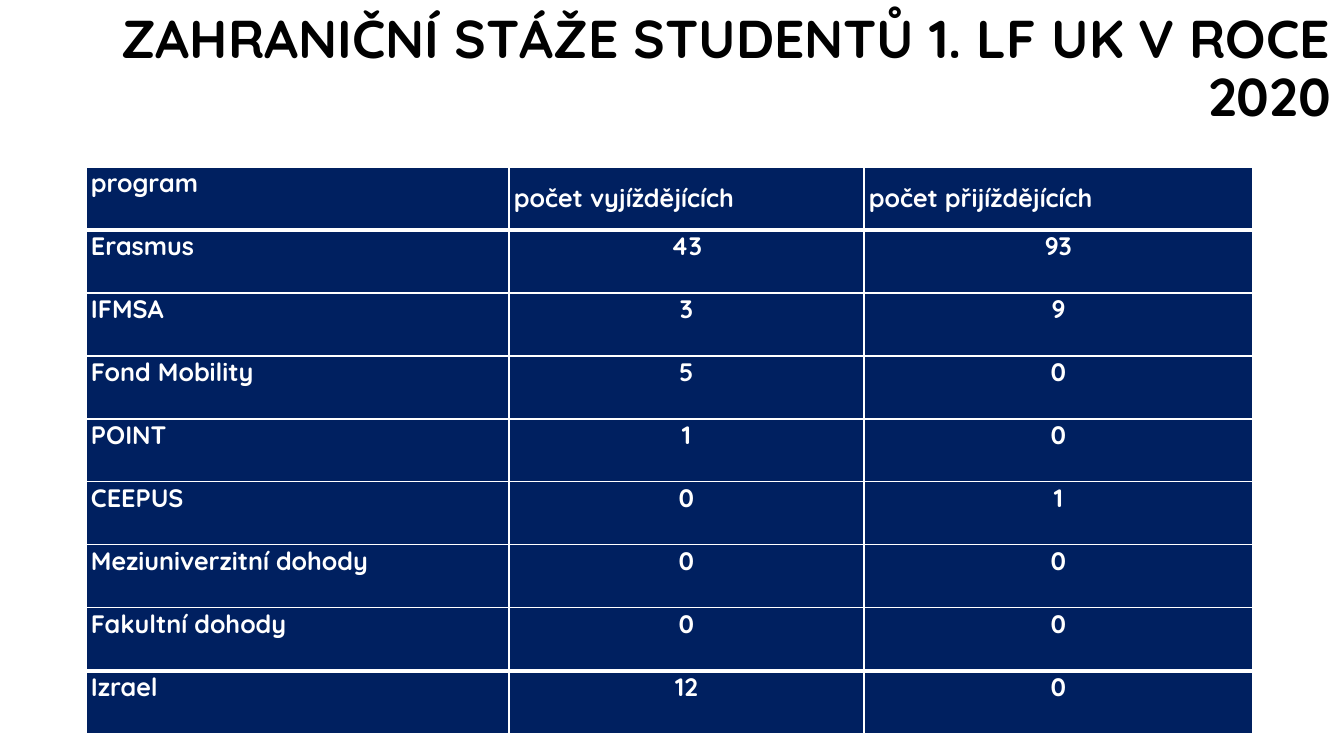
from lxml.etree import SubElement
from pptx import Presentation
from pptx.dml.color import RGBColor
from pptx.enum.text import MSO_ANCHOR, MSO_AUTO_SIZE, PP_ALIGN
from pptx.oxml.ns import qn
from pptx.util import Pt

SCALE = 914400 / 100.8
NAVY = RGBColor(0x00, 0x20, 0x60)
WHITE = RGBColor(0xFF, 0xFF, 0xFF)
BLACK = RGBColor(0x00, 0x00, 0x00)
FONT = "Quicksand"
WIDTHS = [423, 355, 389]
HEIGHT = 63
ROWS = [
    ("program", "počet vyjíždějících", "počet přijíždějících"),
    ("Erasmus", "43", "93"),
    ("IFMSA", "3", "9"),
    ("Fond Mobility", "5", "0"),
    ("POINT", "1", "0"),
    ("CEEPUS", "0", "1"),
    ("Meziuniverzitní dohody", "0", "0"),
    ("Fakultní dohody", "0", "0"),
    ("Izrael", "12", "0"),
]


def px(count):
    return round(count * SCALE)


def style(para, size, color):
    para.font.name = FONT
    para.font.size = Pt(size)
    para.font.bold = True
    para.font.color.rgb = color


deck = Presentation()
deck.slide_width, deck.slide_height = px(1344), px(756)
slide = deck.slides.add_slide(deck.slide_layouts[5])

title = slide.shapes.title
title.left, title.top, title.width, title.height = px(10), px(12), px(1331), px(117)
frame = title.text_frame
frame.text = "ZAHRANIČNÍ STÁŽE STUDENTŮ 1. LF UK V ROCE 2020"
frame.word_wrap = True
frame.auto_size = MSO_AUTO_SIZE.NONE
frame.vertical_anchor = MSO_ANCHOR.MIDDLE
para = frame.paragraphs[0]
para.alignment = PP_ALIGN.RIGHT
para.line_spacing = 0.9
style(para, 38, BLACK)

table = slide.shapes.add_table(
    len(ROWS), len(WIDTHS), px(86), px(167), px(sum(WIDTHS)), px(HEIGHT * len(ROWS))
).table
for column, width in zip(table.columns, WIDTHS):
    column.width = px(width)

last = len(ROWS) - 1
for r, row in enumerate(ROWS):
    table.rows[r].height = px(HEIGHT)
    for c, text in enumerate(row):
        cell = table.cell(r, c)
        cell.text = text
        cell.margin_left = cell.margin_right = px(5)
        cell.margin_top = cell.margin_bottom = 0
        header = r == 0 and c > 0
        cell.vertical_anchor = MSO_ANCHOR.MIDDLE if header else MSO_ANCHOR.TOP
        para = cell.text_frame.paragraphs[0]
        para.alignment = PP_ALIGN.CENTER if r and c else PP_ALIGN.LEFT
        style(para, 18, WHITE)

        # Thick rules set off the header and the final row
        edges = {
            "lnL": 1,
            "lnR": 1,
            "lnT": 3 if r in (1, last) else 1,
            "lnB": 3 if r in (0, last - 1) else 1,
        }
        props = cell._tc.get_or_add_tcPr()
        for tag, width in edges.items():
            line = SubElement(props, qn("a:" + tag), w=str(Pt(width)))
            fill = SubElement(line, qn("a:solidFill"))
            SubElement(fill, qn("a:srgbClr"), val=str(WHITE))
        cell.fill.solid()
        cell.fill.fore_color.rgb = NAVY

deck.save("out.pptx")
